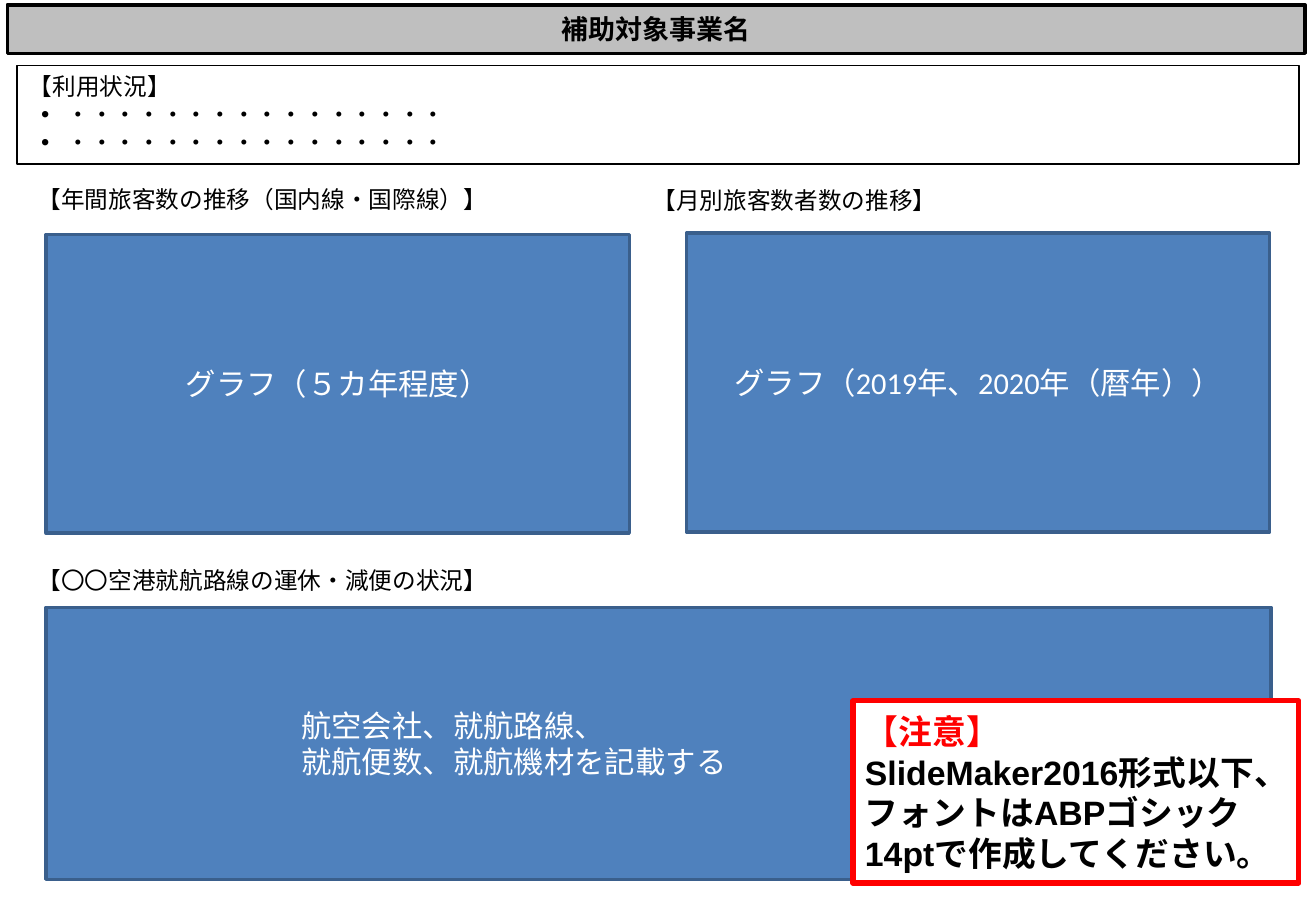
from lxml import etree
from pptx import Presentation
from pptx import util as u
from pptx.dml import color
from pptx.enum import shapes, text
from pptx.oxml import ns

SCALE = 9144
BLACK, WHITE, RED = "000000", "FFFFFF", "FF0000"
GREY, BLUE, DARK_BLUE = "BFBFBF", "4F81BD", "3A5F8C"
MIDDLE, TOP = text.MSO_ANCHOR.MIDDLE, text.MSO_ANCHOR.TOP
LEFT, CENTER = text.PP_ALIGN.LEFT, text.PP_ALIGN.CENTER


def px(length):
    return u.Emu(length * SCALE)


def rgb(value):
    return color.RGBColor.from_string(value)


def add_box(slide, place, fill, line, width, anchor=MIDDLE):
    shape = slide.shapes.add_shape(shapes.MSO_SHAPE.RECTANGLE, *map(px, place))
    shape.shadow.inherit = False
    if fill:
        shape.fill.solid()
        shape.fill.fore_color.rgb = rgb(fill)
    else:
        shape.fill.background()
    shape.line.color.rgb = rgb(line)
    shape.line.width = u.Pt(width)
    shape.text_frame.word_wrap = True
    shape.text_frame.vertical_anchor = anchor
    return shape.text_frame


def write(paragraph, words, size, ink=BLACK, font="Calibri", bold=False, align=LEFT):
    paragraph.alignment = align
    for number, line in enumerate(words.split("\n")):
        if number:
            paragraph.add_line_break()
        run = paragraph.add_run()
        run.text = line
        run.font.size = u.Pt(size)
        run.font.name = font
        run.font.bold = bold
        run.font.color.rgb = rgb(ink)


def indent(paragraph, margin, hanging=0, bullet=None):
    properties = paragraph._p.get_or_add_pPr()
    properties.set("marL", str(px(margin)))
    properties.set("indent", str(-px(hanging)))
    if bullet:
        font = etree.SubElement(properties, ns.qn("a:buFont"))
        font.set("typeface", "Arial")
        etree.SubElement(properties, ns.qn("a:buChar")).set("char", bullet)


def add_heading(slide, place, words):
    frame = slide.shapes.add_textbox(*map(px, place)).text_frame
    frame.word_wrap = True
    write(frame.paragraphs[0], words, 14)


def add_panel(slide, place, words, align=CENTER):
    paragraph = add_box(slide, place, BLUE, DARK_BLUE, 2).paragraphs[0]
    write(paragraph, words, 18, WHITE, align=align)
    return paragraph


def add_usage(slide):
    frame = add_box(slide, (14, 54, 1055, 81), None, BLACK, 0.75, TOP)
    write(frame.paragraphs[0], "【利用状況】", 14)
    for _ in range(2):
        paragraph = frame.add_paragraph()
        write(paragraph, "・" * 16, 14)
        indent(paragraph, 31, 21, "•")


def add_notice(slide):
    frame = add_box(slide, (702, 577, 367, 150), WHITE, RED, 3)
    write(frame.paragraphs[0], "【注意】", 20, RED, "Arial", True)
    for words in ("SlideMaker2016形式以下、", "フォントはABPゴシック14ptで作成してください。"):
        write(frame.add_paragraph(), words, 20, BLACK, "Arial", True)


def main():
    presentation = Presentation()
    presentation.slide_width, presentation.slide_height = px(1083), px(750)
    slide = presentation.slides.add_slide(presentation.slide_layouts[6])

    title = add_box(slide, (6, 4, 1068, 40), GREY, BLACK, 2)
    write(title.paragraphs[0], "補助対象事業名", 16, BLACK, "Arial", True, CENTER)
    add_usage(slide)

    add_heading(slide, (21, 147, 472, 34), "【年間旅客数の推移（国内線・国際線）】")
    add_heading(slide, (527, 148, 472, 34), "【月別旅客数者数の推移】")
    add_heading(slide, (21, 461, 393, 34), "【〇〇空港就航路線の運休・減便の状況】")

    add_panel(slide, (38, 193, 480, 246), "グラフ（５カ年程度）")
    add_panel(slide, (565, 192, 480, 246), "グラフ（2019年、2020年（暦年））")
    routes = add_panel(slide, (38, 500, 1008, 224),
                       "航空会社、就航路線、\n就航便数、就航機材を記載する", LEFT)
    routes.level = 4
    indent(routes, 200)

    add_notice(slide)
    presentation.save("out.pptx")


if __name__ == "__main__":
    main()
